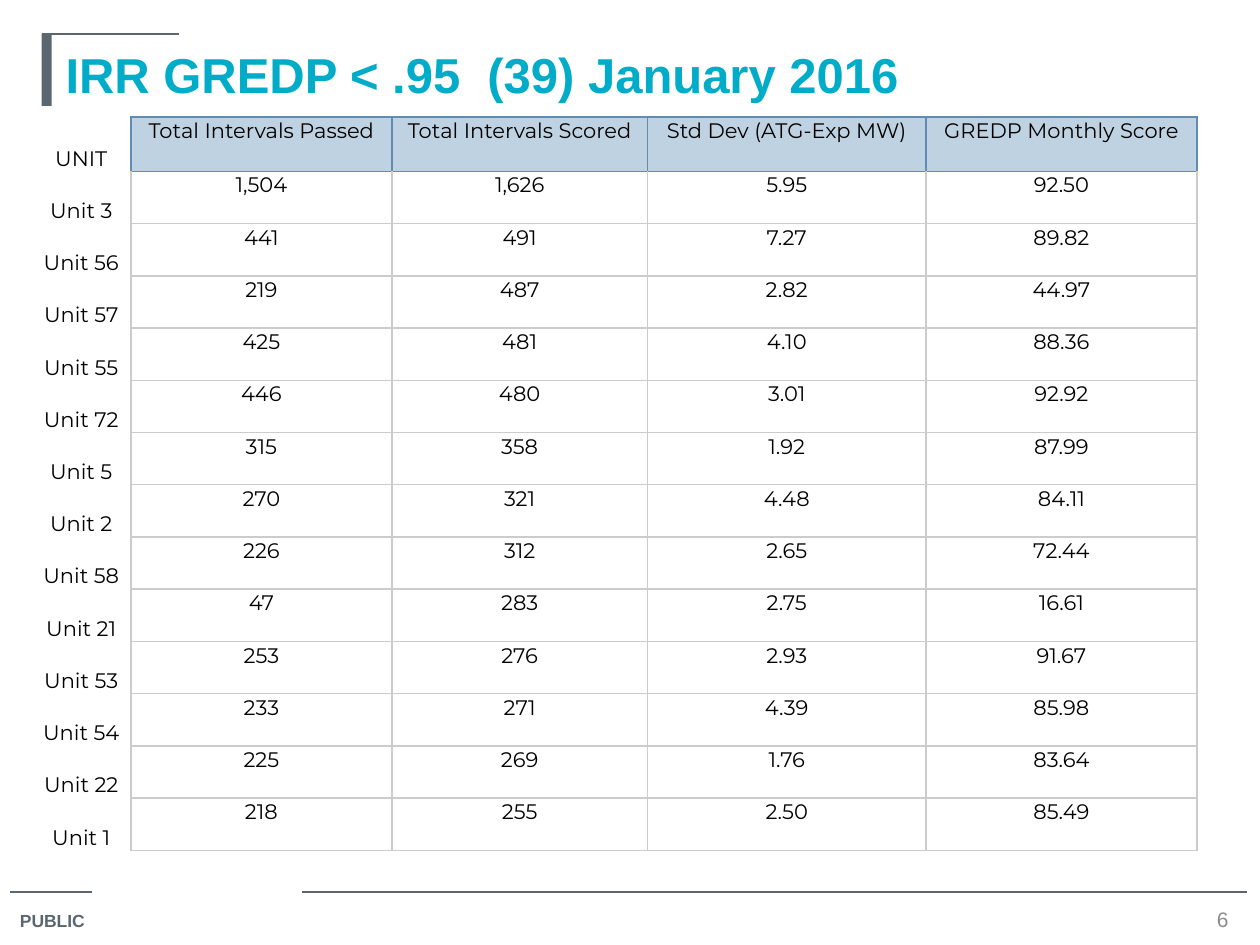
import pptx
import pptx.dml.color
import pptx.enum.shapes
import pptx.enum.text
import pptx.oxml
import pptx.oxml.ns
import pptx.util
from pptx.util import Inches

RGBColor = pptx.dml.color.RGBColor
Align = pptx.enum.text.PP_ALIGN
Anchor = pptx.enum.text.MSO_ANCHOR

SLATE = RGBColor(0x5B, 0x67, 0x70)
TEAL = RGBColor(0x00, 0xAC, 0xC8)
GRAY = RGBColor(0x8C, 0x8C, 0x8C)
BLACK = RGBColor(0x00, 0x00, 0x00)
HEADER_FILL = RGBColor(0xBF, 0xD2, 0xE2)
HEADER_BORDER = RGBColor(0x60, 0x8B, 0xB4)
GRID = RGBColor(0xCC, 0xCC, 0xCC)

NO_STYLE = "{2D5ABB26-0587-4C30-8999-92F81FD0307C}"
COLUMN_WIDTHS = [0.79, 2.07, 2.03, 2.21, 2.15]
HEADER_HEIGHT = 0.43
ROWS = [
    ("UNIT", "Total Intervals Passed", "Total Intervals Scored",
     "Std Dev (ATG-Exp MW)", "GREDP Monthly Score"),
    ("Unit 3", "1,504", "1,626", "5.95", "92.50"),
    ("Unit 56", "441", "491", "7.27", "89.82"),
    ("Unit 57", "219", "487", "2.82", "44.97"),
    ("Unit 55", "425", "481", "4.10", "88.36"),
    ("Unit 72", "446", "480", "3.01", "92.92"),
    ("Unit 5", "315", "358", "1.92", "87.99"),
    ("Unit 2", "270", "321", "4.48", "84.11"),
    ("Unit 58", "226", "312", "2.65", "72.44"),
    ("Unit 21", "47", "283", "2.75", "16.61"),
    ("Unit 53", "253", "276", "2.93", "91.67"),
    ("Unit 54", "233", "271", "4.39", "85.98"),
    ("Unit 22", "225", "269", "1.76", "83.64"),
    ("Unit 1", "218", "255", "2.50", "85.49"),
]


def write_text(frame, text, *, size, color, font="Arial", bold=False, align=Align.LEFT):
    paragraph = frame.paragraphs[0]
    paragraph.alignment = align
    run = paragraph.add_run()
    run.text = text
    run.font.name = font
    run.font.size = pptx.util.Pt(size)
    run.font.bold = bold
    run.font.color.rgb = color


def add_rule(slide, left, top, width):
    rule = slide.shapes.add_connector(
        pptx.enum.shapes.MSO_CONNECTOR.STRAIGHT,
        Inches(left), Inches(top), Inches(left + width), Inches(top))
    rule.line.color.rgb = SLATE
    rule.line.width = pptx.util.Pt(0.75)
    rule._element.spPr.append(pptx.oxml.parse_xml(
        f"<a:effectLst {pptx.oxml.ns.nsdecls('a')}/>"))


def add_title(slide, left, top, width, height):
    """Place the title with its accent bar and short rule."""
    bar_left = left - 0.09
    bar = slide.shapes.add_shape(
        pptx.enum.shapes.MSO_SHAPE.RECTANGLE,
        Inches(bar_left), Inches(top), Inches(0.08), Inches(0.57))
    bar.shadow.inherit = False
    bar.fill.solid()
    bar.fill.fore_color.rgb = SLATE
    bar.line.fill.background()
    add_rule(slide, bar_left, top, 1.09)

    title = slide.shapes.title
    title.left, title.top = Inches(left), Inches(top)
    title.width, title.height = Inches(width), Inches(height)
    frame = title.text_frame
    frame.vertical_anchor = Anchor.TOP
    frame.margin_top = Inches(0.08)
    frame.auto_size = pptx.enum.text.MSO_AUTO_SIZE.NONE
    write_text(frame, "IRR GREDP < .95  (39) January 2016",
               size=28, color=TEAL, bold=True)


def set_borders(cell, colors):
    """Draw one-point borders; colors maps a side (L, R, T, B) to its color."""
    properties = cell._tc.get_or_add_tcPr()
    for side in "LRTB":
        if side in colors:
            properties.append(pptx.oxml.parse_xml(
                f'<a:ln{side} w="12700" {pptx.oxml.ns.nsdecls("a")}><a:solidFill>'
                f'<a:srgbClr val="{colors[side]}"/></a:solidFill></a:ln{side}>'))


def format_cell(cell, text, is_header, is_unit):
    cell.margin_left = cell.margin_right = cell.margin_top = Inches(0.01)
    cell.margin_bottom = 0
    cell.vertical_anchor = Anchor.BOTTOM if is_unit else Anchor.TOP
    write_text(cell.text_frame, text, size=12, color=BLACK,
               font="Montserrat", align=Align.CENTER)
    border = HEADER_BORDER if is_header else GRID
    set_borders(cell, dict.fromkeys("R" if is_unit else "LRTB", border))
    if is_header and not is_unit:
        cell.fill.solid()
        cell.fill.fore_color.rgb = HEADER_FILL
    else:
        cell.fill.background()


def add_score_table(slide, left, top, width, height):
    table = slide.shapes.add_table(
        len(ROWS), len(COLUMN_WIDTHS),
        Inches(left), Inches(top), Inches(width), Inches(height)).table
    table._tbl.tblPr.find(pptx.oxml.ns.qn("a:tableStyleId")).text = NO_STYLE
    table.first_row = table.horz_banding = False
    for column, column_width in zip(table.columns, COLUMN_WIDTHS):
        column.width = Inches(column_width)
    body_height = (height - HEADER_HEIGHT) / (len(ROWS) - 1)
    for row_index, values in enumerate(ROWS):
        table.rows[row_index].height = Inches(body_height if row_index else HEADER_HEIGHT)
        for column_index, value in enumerate(values):
            format_cell(table.cell(row_index, column_index), value,
                        row_index == 0, column_index == 0)
    for column_index in range(1, len(COLUMN_WIDTHS)):
        set_top_border(table.cell(1, column_index), HEADER_BORDER)


def set_top_border(cell, color):
    line = cell._tc.tcPr.find(pptx.oxml.ns.qn("a:lnT"))
    line.find(".//" + pptx.oxml.ns.qn("a:srgbClr")).set("val", str(color))


def add_footer(slide, left, top, width):
    add_rule(slide, left + 0.02, top, 0.65)
    add_rule(slide, left + 2.34, top, width - 2.34)

    label = slide.shapes.add_textbox(
        Inches(left), Inches(top + 0.09), Inches(0.77), Inches(0.28)).text_frame
    label.word_wrap = False
    label.auto_size = pptx.enum.text.MSO_AUTO_SIZE.SHAPE_TO_FIT_TEXT
    write_text(label, "PUBLIC", size=10, color=SLATE, bold=True)

    number = slide.shapes.add_textbox(
        Inches(left + width - 0.32), Inches(top + 0.1),
        Inches(0.25), Inches(0.23)).text_frame
    number.margin_left = number.margin_right = 0
    number.margin_top = number.margin_bottom = 0
    number.word_wrap = True
    number.vertical_anchor = Anchor.MIDDLE
    write_text(number, "6", size=12, color=GRAY, align=Align.CENTER)


def main():
    presentation = pptx.Presentation()
    presentation.slide_width, presentation.slide_height = Inches(10), Inches(7.5)
    slide = presentation.slides.add_slide(presentation.slide_layouts[5])
    add_footer(slide, 0.06, 7.08, 9.84)
    add_title(slide, 0.42, 0.27, 9.25, 0.65)
    add_score_table(slide, 0.25, 0.93, 9.25, 5.82)
    presentation.save("out.pptx")


if __name__ == "__main__":
    main()
